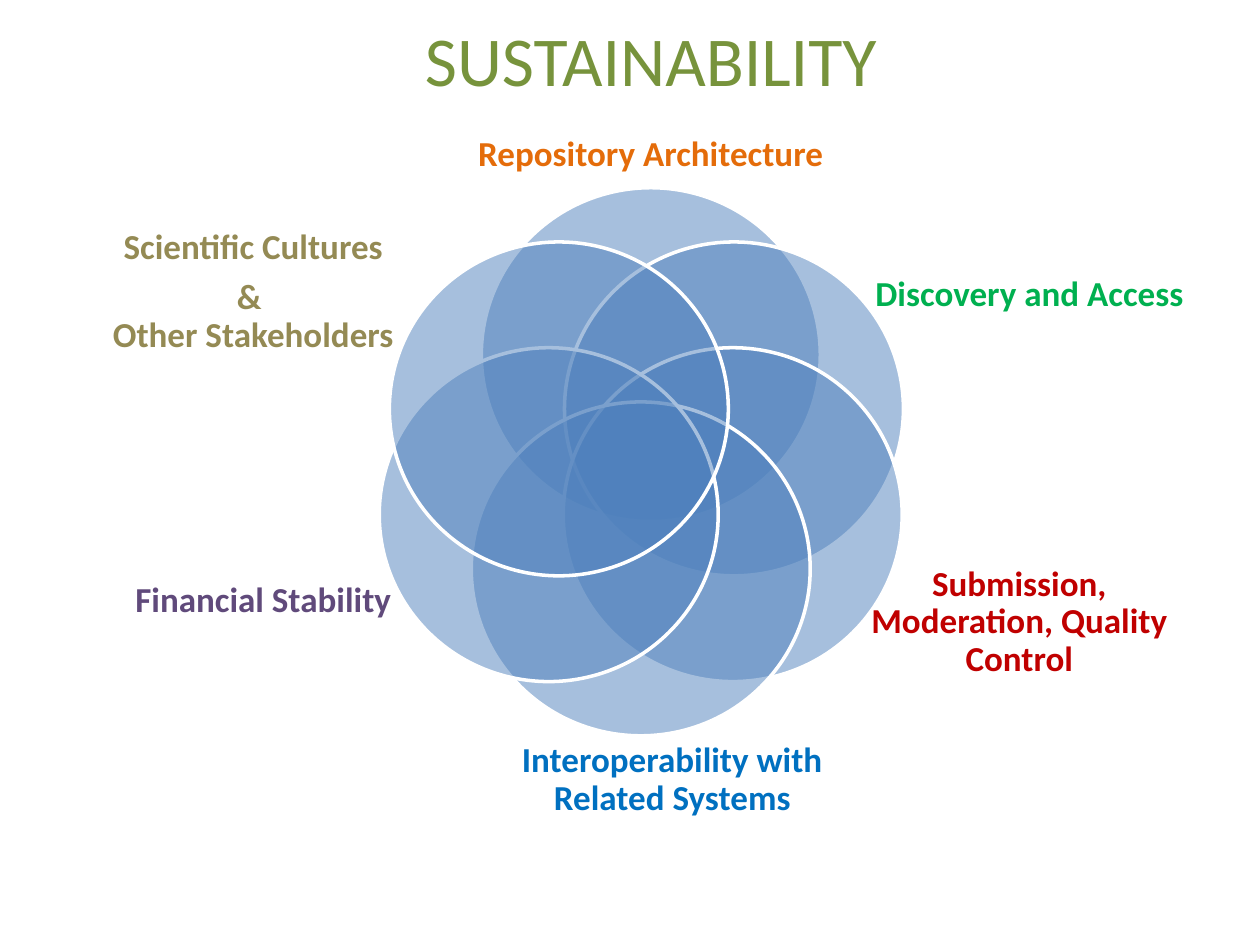
from lxml import etree
from pptx import Presentation, util as u
from pptx.dml.color import RGBColor
from pptx.enum import shapes, text
from pptx.oxml.ns import qn

FONT = "Calibri"
TITLE = "SUSTAINABILITY"
CIRCLE_SIZE = (2.69, 2.65)

# Circle position, label box, label colour, paragraphs (each a list of lines), bottom inset
PETALS = [
    ((3.82, 1.49), (3.75, 0.46, 2.83, 1.54), "E46C0A", [["Repository Architecture"]], 0),
    ((4.48, 1.92), (6.83, 1.5, 2.68, 1.69), "00B050", [["Discovery and Access"]], 0),
    ((4.47, 2.76), (6.75, 4, 2.68, 1.88), "C00000",
     [["Submission, Moderation, Quality Control"]], 0),
    ((3.74, 3.19), (3.92, 5.42, 2.83, 1.54), "0070C0",
     [["Interoperability with Related Systems"]], 0),
    ((3.01, 2.76), (0.67, 1.58, 2.68, 1.88), "948A54",
     [["Scientific Cultures"], ["& ", "Other Stakeholders"]], 0.4),
    ((3.09, 1.92), (0.75, 3.83, 2.68, 1.88), "604A7B", [["Financial Stability"]], 0),
]


def rgb(value):
    return RGBColor.from_string(value)


def inches(*lengths):
    return [u.Inches(length) for length in lengths]


def add_run(paragraph, words, size, color, bold=False):
    run = paragraph.add_run()
    run.text = words
    run.font.name = FONT
    run.font.size = u.Pt(size)
    run.font.bold = bold
    run.font.color.rgb = rgb(color)


def add_circle(slide, position):
    circle = slide.shapes.add_shape(shapes.MSO_SHAPE.OVAL, *inches(*position, *CIRCLE_SIZE))
    circle.shadow.inherit = False
    circle.fill.solid()
    circle.fill.fore_color.rgb = rgb("4F81BD")
    # Half-transparent fill
    fill_color = circle.fill._xPr.find(qn("a:solidFill"))[0]
    etree.SubElement(fill_color, qn("a:alpha")).set("val", "50000")
    circle.line.color.rgb = rgb("FFFFFF")
    circle.line.width = u.Pt(2)


def add_label(slide, box, color, paragraphs, bottom_inset):
    frame = slide.shapes.add_textbox(*inches(*box)).text_frame
    frame.word_wrap = True
    frame.vertical_anchor = text.MSO_ANCHOR.MIDDLE
    frame.margin_left = frame.margin_right = frame.margin_top = 0
    frame.margin_bottom = u.Inches(bottom_inset)
    for index, lines in enumerate(paragraphs):
        paragraph = frame.add_paragraph() if index else frame.paragraphs[0]
        paragraph.alignment = text.PP_ALIGN.CENTER
        paragraph.line_spacing = 0.9
        paragraph.space_after = u.Pt(7)
        for number, line in enumerate(lines):
            if number:
                paragraph.add_line_break()
            add_run(paragraph, line, 20, color, bold=True)


def main():
    prs = Presentation()
    prs.slide_width, prs.slide_height = inches(10, 7.5)
    slide = prs.slides.add_slide(prs.slide_layouts[6])

    # Overlapping circles with their labels
    for position, box, color, paragraphs, bottom_inset in PETALS:
        add_circle(slide, position)
        add_label(slide, box, color, paragraphs, bottom_inset)

    # Title
    title = slide.shapes.add_textbox(*inches(0.75, 0.08, 8.83, 0.77)).text_frame
    title.word_wrap = True
    title.auto_size = text.MSO_AUTO_SIZE.SHAPE_TO_FIT_TEXT
    title.paragraphs[0].alignment = text.PP_ALIGN.CENTER
    add_run(title.paragraphs[0], TITLE, 40, "77933C")

    prs.save("out.pptx")


if __name__ == "__main__":
    main()
